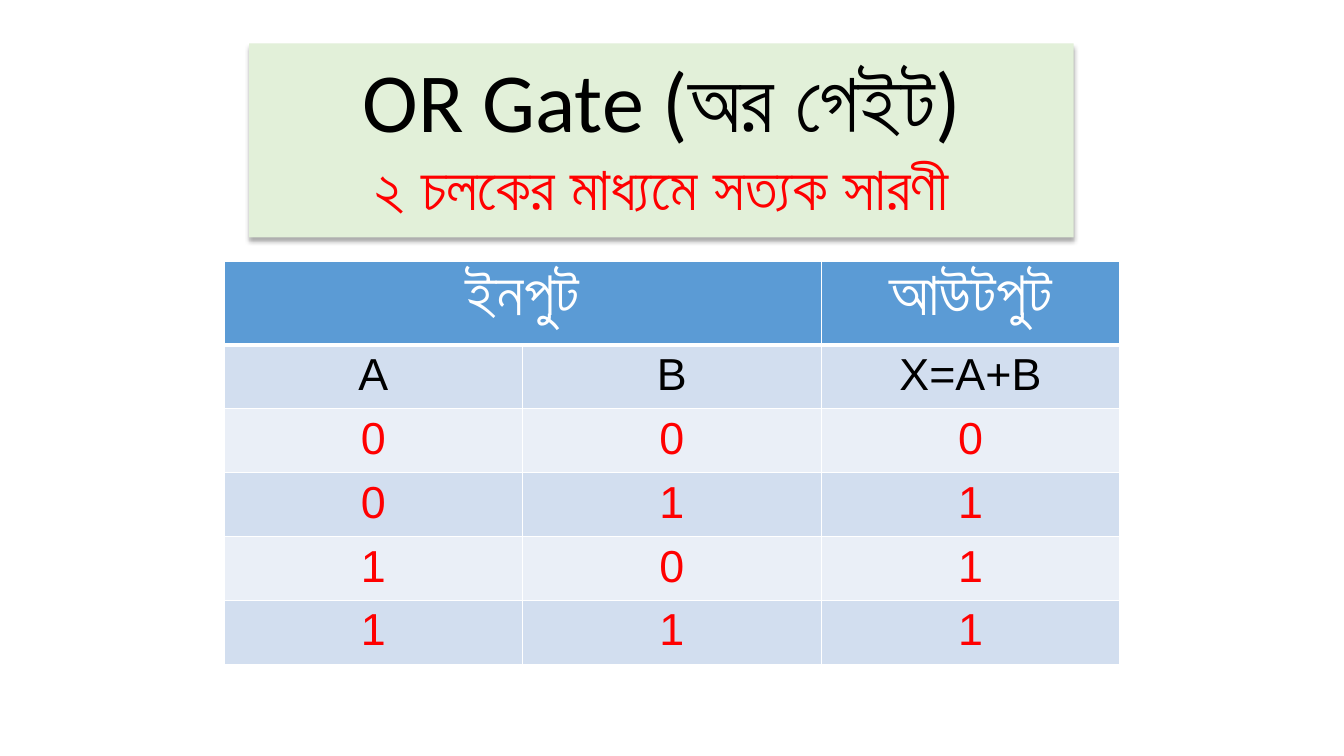
import dataclasses

import lxml.etree
import pptx
import pptx.dml.color
import pptx.enum.text
import pptx.oxml.ns
import pptx.util

Pt = pptx.util.Pt

COLOURS = {
    "title_fill": "E2F0D9",
    "header": "5B9BD5",
    "band_dark": "D2DEEF",
    "band_light": "EAEFF7",
    "white": "FFFFFF",
    "black": "000000",
    "red": "FF0000",
}


@dataclasses.dataclass(frozen=True)
class TextFormat:
    size: float
    font: str
    colour: str
    bold: bool = False


@dataclasses.dataclass(frozen=True)
class TableRow:
    cells: tuple[str, ...]
    height: float
    fill: str
    text_format: TextFormat
    bottom_border: float = 1


TITLE_LINES = (
    ("OR Gate (অর গেইট)", TextFormat(60, "Calibri", "black")),
    ("২ চলকের মাধ্যমে সত্যক সারণী", TextFormat(44, "Calibri", "red")),
)
HEADER_FORMAT = TextFormat(44, "Calibri", "white", True)
VARIABLE_FORMAT = TextFormat(32, "Arial", "black")
VALUE_FORMAT = TextFormat(32, "Arial", "red")
ROW_HEIGHT = 45.6


def rgb(name: str) -> pptx.dml.color.RGBColor:
    return pptx.dml.color.RGBColor.from_string(COLOURS[name])


def add_element(parent, tag: str, **attributes: str):
    """Append a DrawingML element to parent."""
    return lxml.etree.SubElement(parent, pptx.oxml.ns.qn(tag), attributes)


def write_paragraph(paragraph, text: str, text_format: TextFormat) -> None:
    paragraph.alignment = pptx.enum.text.PP_ALIGN.CENTER
    paragraph.text = text
    font = paragraph.runs[0].font
    values = {
        "size": Pt(text_format.size),
        "name": text_format.font,
        "bold": text_format.bold,
    }
    for name, value in values.items():
        setattr(font, name, value)
    font.color.rgb = rgb(text_format.colour)


def format_title(title) -> None:
    box = {"left": 178, "top": 31, "width": 589, "height": 138.5}
    for name, value in box.items():
        setattr(title, name, Pt(value))
    title.fill.solid()
    title.fill.fore_color.rgb = rgb("title_fill")

    # Soft shadow below the box
    effects = add_element(title.element.spPr, "a:effectLst")
    shadow = add_element(
        effects, "a:outerShdw", blurRad=str(Pt(3.5)), dist=str(Pt(2.2)),
        dir="5400000", algn="ctr", rotWithShape="0",
    )
    colour = add_element(shadow, "a:srgbClr", val=COLOURS["black"])
    add_element(colour, "a:alpha", val="32000")

    frame = title.text_frame
    frame_format = {
        "auto_size": pptx.enum.text.MSO_AUTO_SIZE.NONE,
        "vertical_anchor": pptx.enum.text.MSO_ANCHOR.TOP,
        "word_wrap": True,
    }
    for name, value in frame_format.items():
        setattr(frame, name, value)
    for index, (text, text_format) in enumerate(TITLE_LINES):
        paragraph = frame.add_paragraph() if index else frame.paragraphs[0]
        write_paragraph(paragraph, text, text_format)


def format_cell(cell, fill: str, top: float, bottom: float) -> None:
    properties = cell._tc.get_or_add_tcPr()
    borders = {"a:lnL": 1, "a:lnR": 1, "a:lnT": top, "a:lnB": bottom}
    for tag, width in borders.items():
        line = add_element(properties, tag, w=str(Pt(width)))
        line_fill = add_element(line, "a:solidFill")
        add_element(line_fill, "a:srgbClr", val=COLOURS["white"])
    cell.fill.solid()
    cell.fill.fore_color.rgb = rgb(fill)


def truth_table_rows() -> list[TableRow]:
    rows = [
        TableRow(("ইনপুট", "", "আউটপুট"), 60, "header", HEADER_FORMAT, 3),
        TableRow(("A", "B", "X=A+B"), ROW_HEIGHT, "band_dark", VARIABLE_FORMAT),
    ]
    for a in (0, 1):
        for b in (0, 1):
            values = (str(a), str(b), str(a | b))
            fill = "band_dark" if b else "band_light"
            rows.append(TableRow(values, ROW_HEIGHT, fill, VALUE_FORMAT))
    return rows


def add_truth_table(slide) -> None:
    rows = truth_table_rows()
    height = sum(row.height for row in rows)
    table = slide.shapes.add_table(
        len(rows), 3, Pt(160), Pt(186.5), Pt(640), Pt(height)
    ).table
    table.cell(0, 0).merge(table.cell(0, 1))
    top_border = 1
    for row_index, row in enumerate(rows):
        table.rows[row_index].height = Pt(row.height)
        for column_index, text in enumerate(row.cells):
            cell = table.cell(row_index, column_index)
            format_cell(cell, row.fill, top_border, row.bottom_border)
            if text:
                paragraph = cell.text_frame.paragraphs[0]
                write_paragraph(paragraph, text, row.text_format)
        top_border = row.bottom_border


def main() -> None:
    presentation = pptx.Presentation()
    presentation.slide_width = Pt(960)
    presentation.slide_height = Pt(540)
    title_only = presentation.slide_layouts[5]
    slide = presentation.slides.add_slide(title_only)
    format_title(slide.shapes.title)
    add_truth_table(slide)
    presentation.save("out.pptx")


if __name__ == "__main__":
    main()
